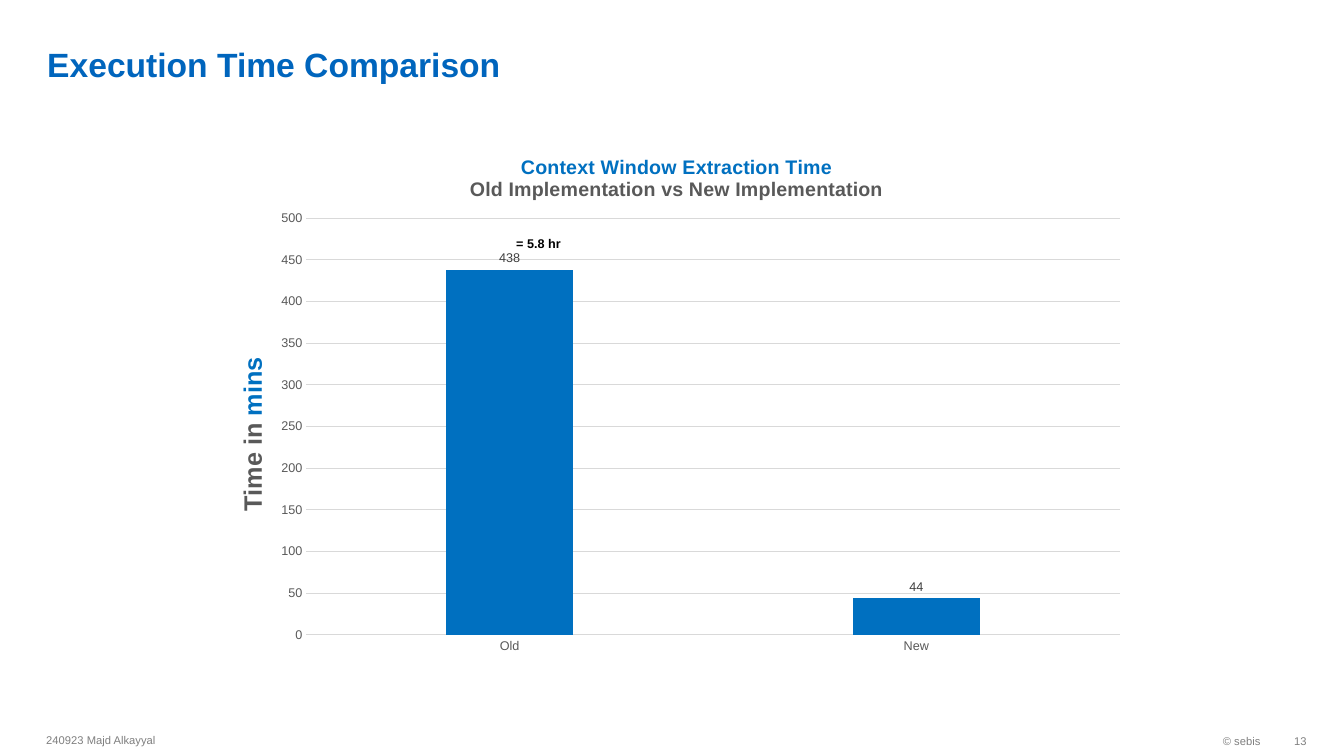
"""Build the execution time comparison slide."""
from dataclasses import dataclass

from lxml import etree
from pptx import Presentation
from pptx.chart.data import CategoryChartData
from pptx.dml.color import RGBColor
from pptx.enum.chart import XL_CHART_TYPE as ChartType
from pptx.enum.chart import XL_LABEL_POSITION as LabelPos
from pptx.enum.chart import XL_TICK_MARK as Tick
from pptx.enum.text import MSO_ANCHOR as Anchor
from pptx.enum.text import PP_ALIGN as Align
from pptx.oxml.ns import qn
from pptx.slide import Slide
from pptx.util import Inches, Pt

BLUE = "0070C0"
DARK = "595959"
GREY = "7F7F7F"
RULE = "D9D9D9"


@dataclass
class Label:
    """One text box: its place, its text and its format."""

    text: str
    left: float
    top: float
    width: float
    height: float
    size: float = 8
    color: str = GREY
    bold: bool = False
    align: Align = Align.LEFT
    anchor: Anchor = Anchor.MIDDLE
    inset_left: float = 0.1
    inset_right: float = 0.1
    inset_y: float = 0.05
    spacing: float = 1.0


LABELS = [
    Label("Execution Time Comparison", 0.37, 0.05, 11.58, 0.79, size=24, color="0065BD",
          bold=True, anchor=Anchor.BOTTOM, inset_y=0, spacing=1.15),
    Label("© sebis", 10.26, 7.19, 2.34, 0.32, align=Align.RIGHT),
    Label("13", 12.6, 7.19, 0.36, 0.32, align=Align.RIGHT, inset_right=0),
    Label("= 5.8 hr", 4.98, 2.29, 0.75, 0.25, size=9, color="000000", bold=True,
          anchor=Anchor.TOP, inset_left=0.14, inset_right=0),
    Label("240923 Majd Alkayyal", 0.36, 7.18, 6.3, 0.32),
]


def rgb(color: str) -> RGBColor:
    """Turn a hex string into a colour."""
    return RGBColor.from_string(color)


def set_font(font, size: float, color: str, bold: bool = False) -> None:
    """Format a font."""
    font.name = "Arial"
    font.size = Pt(size)
    font.bold = bold
    font.color.rgb = rgb(color)


def add_run(p, text: str, **fmt) -> None:
    """Add formatted text to a paragraph."""
    r = p.add_run()
    r.text = text
    set_font(r.font, **fmt)


def add_label(s: Slide, label: Label) -> None:
    """Draw one text box."""
    sp = s.shapes.add_textbox(*map(Inches, (label.left, label.top, label.width, label.height)))
    tf = sp.text_frame
    tf.word_wrap = True
    tf.vertical_anchor = label.anchor
    tf.margin_left, tf.margin_right = Inches(label.inset_left), Inches(label.inset_right)
    tf.margin_top = tf.margin_bottom = Inches(label.inset_y)
    p = tf.paragraphs[0]
    p.alignment = label.align
    p.line_spacing = label.spacing
    add_run(p, label.text, size=label.size, color=label.color, bold=label.bold)


def place(parent, before: str, **values) -> None:
    """Give a chart part a manual layout ahead of the named element."""
    for old in parent.findall(qn("c:layout")):
        parent.remove(old)
    layout = etree.Element(qn("c:layout"))
    manual = etree.SubElement(layout, qn("c:manualLayout"))
    for name, value in values.items():
        etree.SubElement(manual, qn(f"c:{name}")).set("val", str(value))
    parent.find(qn(before)).addprevious(layout)


def style_line(line, color: str) -> None:
    """Give a chart line its colour and width."""
    line.color.rgb = rgb(color)
    line.width = Pt(0.75)


def add_time_chart(s: Slide) -> None:
    """Draw the column chart of extraction times."""
    data = CategoryChartData()
    data.categories = ["Old", "New"]
    data.add_series("Series 1", (438, 44))
    frame = s.shapes.add_chart(ChartType.COLUMN_CLUSTERED, Inches(2.04), Inches(1.29),
                               Inches(9.25), Inches(5.3), data)
    chart = frame.chart
    set_font(chart.font, 10, "000000")
    chart.has_legend = False

    title = chart.chart_title
    tf = title.text_frame
    add_run(tf.paragraphs[0], "Context Window Extraction Time", size=14, color=BLUE, bold=True)
    add_run(tf.add_paragraph(), "Old Implementation vs New Implementation",
            size=14, color=DARK, bold=True)
    title.include_in_layout = False
    place(title._element, "c:overlay", xMode="edge", yMode="edge", x=0.28, y=0.04)

    plot = chart.plots[0]
    plot.gap_width = 219
    plot.overlap = -27
    plot.vary_by_categories = False
    fill = plot.series[0].format.fill
    fill.solid()
    fill.fore_color.rgb = rgb(BLUE)
    plot.has_data_labels = True
    labels = plot.data_labels
    labels.show_value = True
    labels.position = LabelPos.OUTSIDE_END
    set_font(labels.font, 9, "404040")

    for axis in (chart.category_axis, chart.value_axis):
        axis.major_tick_mark = axis.minor_tick_mark = Tick.NONE
        set_font(axis.tick_labels.font, 9, DARK)
    style_line(chart.category_axis.format.line, RULE)
    values = chart.value_axis
    values.minimum_scale, values.maximum_scale, values.major_unit = 0, 500, 50
    values.format.line.fill.background()
    style_line(values.major_gridlines.format.line, RULE)
    tf = values.axis_title.text_frame
    tf._txBody.bodyPr.set("rot", "-5400000")
    tf._txBody.bodyPr.set("vert", "horz")
    add_run(tf.paragraphs[0], "Time in ", size=18, color=DARK, bold=True)
    add_run(tf.paragraphs[0], "mins", size=18, color=BLUE, bold=True)
    place(values.axis_title._element, "c:overlay", xMode="edge", yMode="edge", x=0.03, y=0.42)
    place(plot._element.getparent(), "c:barChart", layoutTarget="inner", xMode="edge",
          yMode="edge", x=0.108, y=0.165, w=0.872, h=0.78)


def main() -> None:
    """Build and save the slide."""
    prs = Presentation()
    prs.slide_width, prs.slide_height = Inches(13.33), Inches(7.5)
    s = prs.slides.add_slide(prs.slide_layouts[6])
    add_time_chart(s)
    for label in LABELS:
        add_label(s, label)
    prs.save("out.pptx")


if __name__ == "__main__":
    main()
